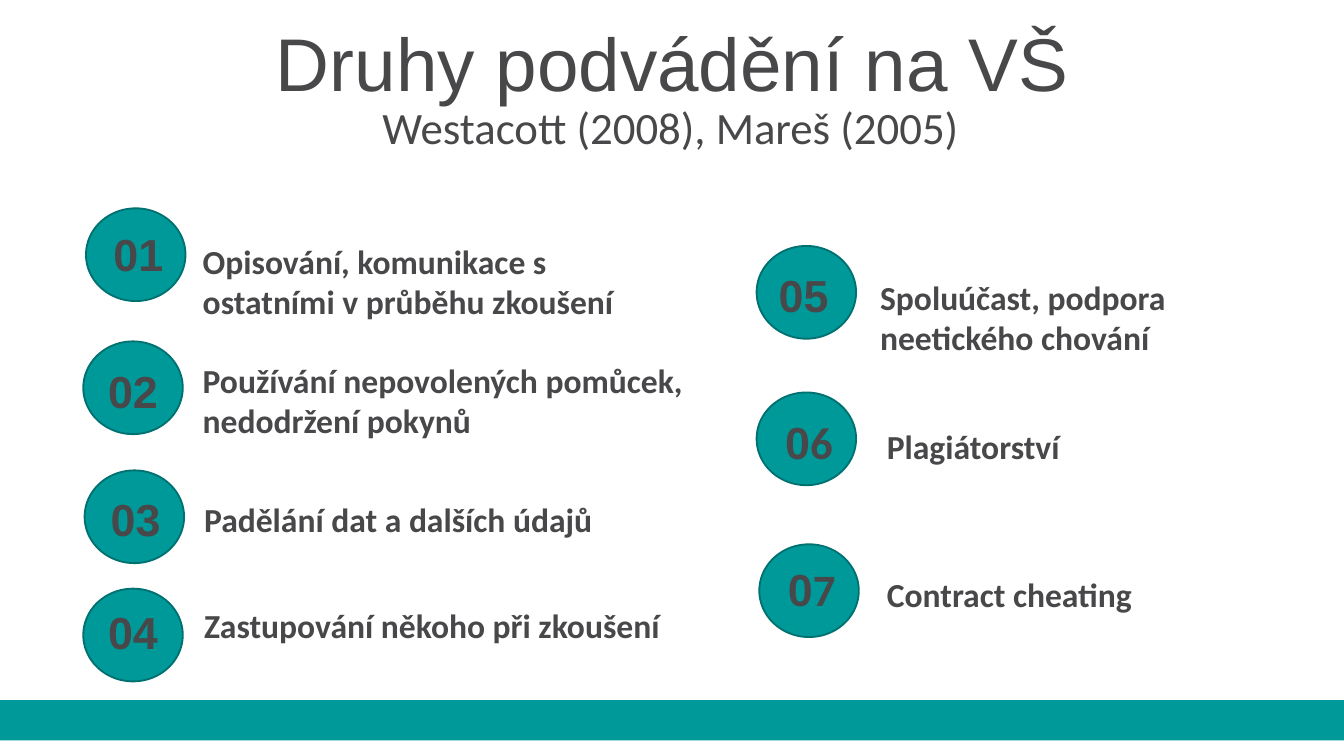
from dataclasses import dataclass

from pptx import Presentation
from pptx.dml.color import RGBColor
from pptx.enum.shapes import MSO_SHAPE
from pptx.enum.text import MSO_ANCHOR, PP_ALIGN
from pptx.util import Inches, Pt


@dataclass(frozen=True)
class Theme:
    teal: RGBColor = RGBColor(0x00, 0x99, 0x99)
    outline: RGBColor = RGBColor(0x00, 0x71, 0x71)
    text: RGBColor = RGBColor(0x48, 0x47, 0x49)
    heading_font: str = "Arial"
    body_font: str = "Calibri"
    title_size: int = 40
    number_size: int = 24
    subtitle_size: int = 24
    label_size: int = 18


THEME = Theme()
SLIDE_WIDTH = 10
SLIDE_HEIGHT = SLIDE_WIDTH * 9 / 16
CIRCLE_SIZE = (0.74, 0.69)
NUMBER_SIZE = (0.7, 0.5)

ITEMS = [
    ("01", (0.64, 1.55), (0.68, 1.64), (1.41, 1.74, 3.75, 0.24),
     "Opisování, komunikace s ostatními v průběhu zkoušení"),
    ("02", (0.62, 2.54), (0.64, 2.66), (1.41, 2.63, 3.8, 0.31),
     "Používání nepovolených pomůcek, nedodržení pokynů"),
    ("03", (0.63, 3.5), (0.66, 3.61), (1.42, 3.66, 3.58, 0.6),
     "Padělání dat a dalších údajů"),
    ("04", (0.62, 4.38), (0.64, 4.45), (1.42, 4.45, 3.79, 0.35),
     "Zastupování někoho při zkoušení"),
    ("05", (5.63, 1.83), (5.63, 1.94), (6.45, 2.01, 3.39, 0.34),
     "Spoluúčast, podpora neetického chování"),
    ("06", (5.63, 2.92), (5.67, 3.04), (6.5, 3.12, 2.91, 0.34),
     "Plagiátorství"),
    ("07", (5.65, 4.05), (5.69, 4.13), (6.5, 4.22, 2.91, 0.34),
     "Contract cheating"),
]
BODY_FONT_DIGITS = {"06", "07"}


def add_filled_shape(slide, kind, box, line=None):
    shape = slide.shapes.add_shape(kind, *map(Inches, box))
    shape.shadow.inherit = False
    shape.fill.solid()
    shape.fill.fore_color.rgb = THEME.teal
    if line is None:
        shape.line.fill.background()
    else:
        shape.line.color.rgb = line
        shape.line.width = Pt(1)


def add_run(paragraph, text, font, size, bold):
    run = paragraph.add_run()
    run.text = text
    run.font.name = font
    run.font.size = Pt(size)
    run.font.bold = bold
    run.font.color.rgb = THEME.text


def add_text(slide, text, *, box, size, font=THEME.body_font, bold=False,
             align=PP_ALIGN.LEFT, anchor=MSO_ANCHOR.TOP, margin=0.05,
             spacing=None, last_font=None):
    frame = slide.shapes.add_textbox(*map(Inches, box)).text_frame
    frame.word_wrap = True
    frame.vertical_anchor = anchor
    frame.margin_left = frame.margin_right = Inches(0.1)
    frame.margin_top = frame.margin_bottom = Inches(margin)
    paragraph = frame.paragraphs[0]
    paragraph.alignment = align
    paragraph.line_spacing = spacing
    if last_font:
        add_run(paragraph, text[:-1], font, size, bold)
        add_run(paragraph, text[-1], last_font, size, bold)
    else:
        add_run(paragraph, text, font, size, bold)


def add_heading(slide, text, **formatting):
    add_text(slide, text, align=PP_ALIGN.CENTER, anchor=MSO_ANCHOR.MIDDLE,
             margin=0.1, **formatting)


def add_item(slide, number, circle, number_place, label_box, label):
    add_filled_shape(slide, MSO_SHAPE.OVAL, circle + CIRCLE_SIZE,
                     line=THEME.outline)
    last_font = THEME.body_font if number in BODY_FONT_DIGITS else None
    add_text(slide, number, box=number_place + NUMBER_SIZE,
             size=THEME.number_size, font=THEME.heading_font, bold=True,
             align=PP_ALIGN.CENTER, last_font=last_font)
    add_text(slide, label, box=label_box, size=THEME.label_size, bold=True)


def main():
    presentation = Presentation()
    presentation.slide_width = Inches(SLIDE_WIDTH)
    presentation.slide_height = Inches(SLIDE_HEIGHT)
    slide = presentation.slides.add_slide(presentation.slide_layouts[6])

    add_filled_shape(slide, MSO_SHAPE.RECTANGLE, (0, 5.21, SLIDE_WIDTH, 0.3))
    add_heading(slide, "Druhy podvádění na VŠ",
                box=(0, 0.13, SLIDE_WIDTH, 0.66),
                size=THEME.title_size, font=THEME.heading_font)
    add_heading(slide, "Westacott (2008), Mareš (2005)",
                box=(0.01, 0.81, 9.96, 0.31), size=THEME.subtitle_size,
                spacing=0.9)
    for item in ITEMS:
        add_item(slide, *item)

    presentation.save("out.pptx")


if __name__ == "__main__":
    main()
